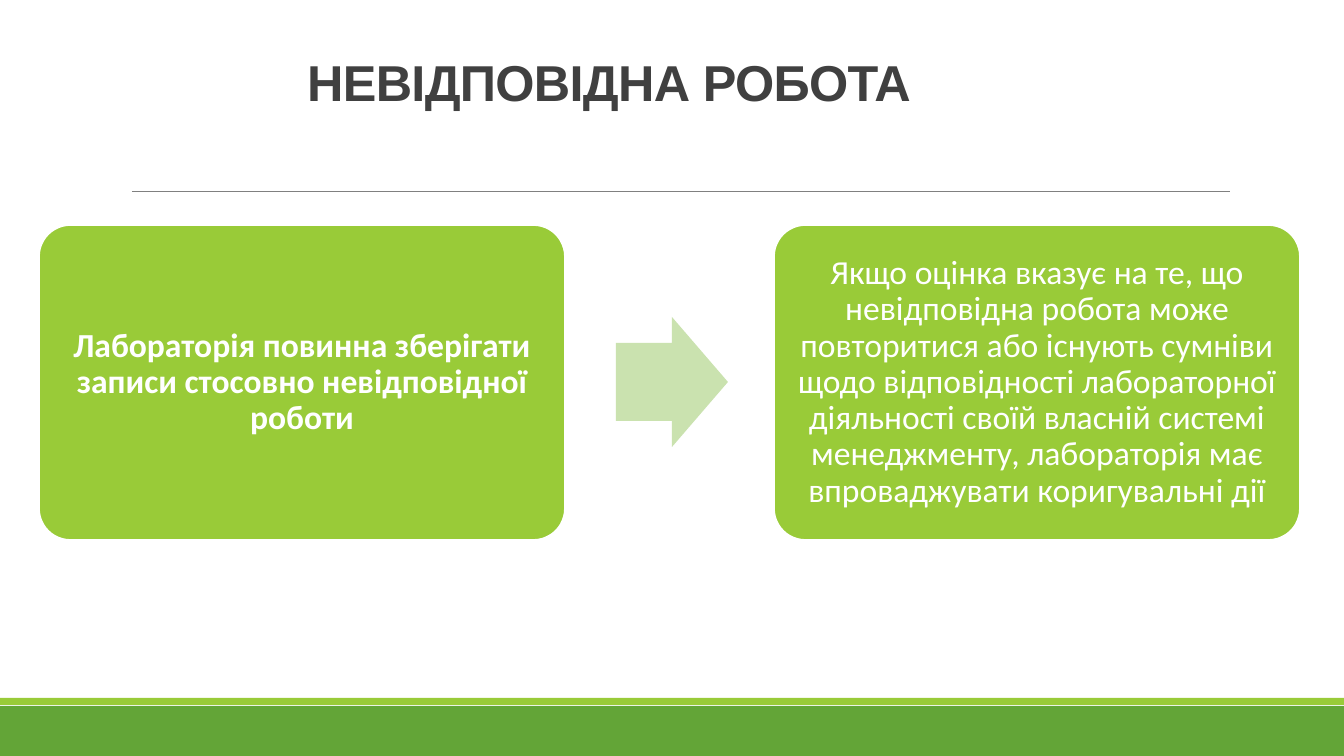
from lxml import etree
from pptx import Presentation
from pptx.dml.color import RGBColor
from pptx.enum.shapes import MSO_CONNECTOR, MSO_SHAPE as Preset
from pptx.enum.text import MSO_ANCHOR as Anchor, MSO_AUTO_SIZE as AutoSize, PP_ALIGN as Align
from pptx.oxml.ns import qn
from pptx.util import Pt

PX = 914400 / 100.8
LIME, GREEN, PALE, WHITE = "99CB38", "63A537", "CAE2AF", "FFFFFF"


def px(*lengths):
    """Turn pixel lengths into EMU."""
    return [round(length * PX) for length in lengths]


def add_filled(preset, box, color):
    shape = slide.shapes.add_shape(preset, *px(*box))
    shape.shadow.inherit = False
    shape.fill.solid()
    shape.fill.fore_color.rgb = RGBColor.from_string(color)
    shape.line.fill.background()
    return shape


deck = Presentation()
deck.slide_width, deck.slide_height = px(1344, 756)
slide = deck.slides.add_slide(deck.slide_layouts[5])

# Footer bands and the rule under the title
add_filled(Preset.RECTANGLE, (0, 706, 1344, 50), GREEN)
add_filled(Preset.RECTANGLE, (0, 698, 1344, 7), LIME)
title_rule = slide.shapes.add_connector(MSO_CONNECTOR.STRAIGHT, *px(132, 191, 1230, 191))
title_rule.line.color.rgb = RGBColor.from_string("808080")
title_rule.line.width = Pt(0.5)
etree.SubElement(title_rule._element.spPr, qn("a:effectLst"))

# Title
title = slide.shapes.title
title.left, title.top, title.width, title.height = px(212, 35, 794, 82)
heading = title.text_frame
heading.text = "НЕВІДПОВІДНА РОБОТА"
heading.word_wrap = True
heading.auto_size = AutoSize.NONE
heading.vertical_anchor = Anchor.BOTTOM
line = heading.paragraphs[0]
line.alignment = Align.CENTER
line.line_spacing = 0.85
line.font.name, line.font.size, line.font.bold = "Arial", Pt(36), True
line.font.color.rgb = RGBColor.from_string("404040")
line.runs[0]._r.get_or_add_rPr().set("spc", "-50")

# Two steps joined by a block arrow
steps = [
    (39, True, "Лабораторія повинна зберігати записи стосовно невідповідної роботи"),
    (774, False, "Якщо оцінка вказує на те, що невідповідна робота може повторитися "
                 "або існують сумніви щодо відповідності лабораторної діяльності своїй "
                 "власній системі менеджменту, лабораторія має впроваджувати коригувальні дії"),
]
for left, bold, wording in steps:
    step = add_filled(Preset.ROUNDED_RECTANGLE, (left, 225, 526, 315), LIME)
    step.adjustments[0] = 0.1
    step.line.color.rgb = RGBColor.from_string(WHITE)
    step.line.width = Pt(1.25)
    frame = step.text_frame
    frame.text = wording
    frame.word_wrap = True
    frame.vertical_anchor = Anchor.MIDDLE
    frame.margin_left, frame.margin_top, frame.margin_right, frame.margin_bottom = px(10, 10, 10, 10)
    paragraph = frame.paragraphs[0]
    paragraph.alignment = Align.CENTER
    paragraph.line_spacing = 0.9
    paragraph.font.name, paragraph.font.size, paragraph.font.bold = "Calibri", Pt(24), bold
    paragraph.font.color.rgb = RGBColor.from_string(WHITE)

arrow = add_filled(Preset.RIGHT_ARROW, (616, 317, 112, 130), PALE)
arrow.adjustments[0] = 0.6
arrow.adjustments[1] = 0.5

deck.save("out.pptx")
